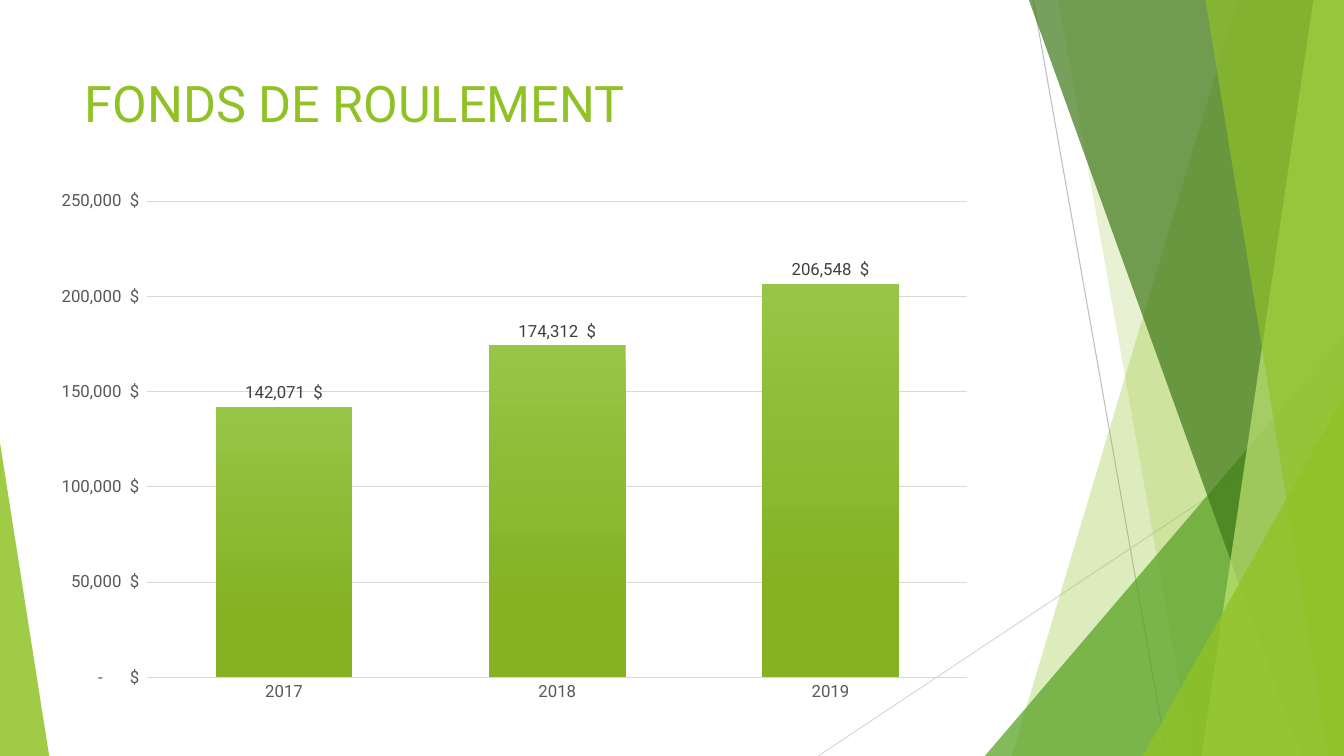
from lxml.etree import SubElement
from pptx import Presentation
from pptx.chart.data import CategoryChartData
from pptx.dml.color import RGBColor
from pptx.enum.chart import XL_CHART_TYPE, XL_LABEL_POSITION, XL_TICK_MARK
from pptx.enum.shapes import MSO_CONNECTOR, MSO_SHAPE
from pptx.enum.text import MSO_ANCHOR, MSO_AUTO_SIZE, PP_ALIGN
from pptx.oxml.ns import qn
from pptx.util import Cm, Pt

TITLE = "FONDS DE ROULEMENT"
WORKING_CAPITAL = {"2017": 142071, "2018": 174312, "2019": 206548}
DOLLARS = r'_ * #,##0_)\ "$"_ ;_ * \(#,##0\)\ "$"_ ;_ * "-"??_)\ "$"_ ;_ @_ '
FONT = "Roboto"
COLORS = {
    "lime": "90C226", "green": "54A021", "forest": "3F7819", "pale": "C0E474",
    "bar_top": "97C547", "bar_bottom": "84B223", "axis": "595959",
    "label": "404040", "grid": "D9D9D9", "gray": "BFBFBF",
}
WIDTH, HEIGHT = 33.87, 19.05  # all lengths are in centimetres

# start x, start y, end x, end y, color
LINES = [
    (26.04, 0, 29.41, HEIGHT, "gray"),
    (WIDTH, 10.24, 20.62, HEIGHT, "grid"),
]
# Bands reach the right edge: ("band", top x, bottom x, color, opacity)
# Triangles stand on the bottom edge: ("triangle", left, width, height, apex, color, opacity)
FACETS = [
    ("band", 31.19, 25.5, "lime", 30),
    ("band", 26.67, 30.05, "lime", 20),
    ("triangle", 24.82, 9.05, 10.59, 1, "green", 72),
    ("band", 25.93, 32.79, "forest", 70),
    ("band", 33.1, 30.28, "pale", 70),
    ("band", 30.38, 33.48, "lime", 65),
    ("triangle", 28.8, 5.07, 9.07, 1, "lime", 80),
    ("triangle", 0, 1.24, 7.9, 0, "lime", 85),
]


def rgb(name):
    return RGBColor.from_string(COLORS[name])


def style_font(font, size, color):
    font.name, font.size, font.bold = FONT, Pt(size), False
    font.color.rgb = rgb(color)


def write_text(frame, text, size, color, align=PP_ALIGN.LEFT, anchor=MSO_ANCHOR.TOP):
    frame.word_wrap = True
    frame.auto_size = MSO_AUTO_SIZE.NONE
    frame.vertical_anchor = anchor
    para = frame.paragraphs[0]
    para.alignment = align
    span = para.add_run()
    span.text = text
    style_font(span.font, size, color)


def add_line(page, x1, y1, x2, y2, color):
    line = page.shapes.add_connector(MSO_CONNECTOR.STRAIGHT, Cm(x1), Cm(y1), Cm(x2), Cm(y2))
    line.line.color.rgb = rgb(color)
    line.line.width = Pt(0.75)
    SubElement(line.element.spPr, qn("a:effectLst"))


def add_band(page, top_x, bottom_x):
    builder = page.shapes.build_freeform(Cm(top_x), 0, scale=1.0)
    corners = [(WIDTH, 0), (WIDTH, HEIGHT), (bottom_x, HEIGHT)]
    builder.add_line_segments([(Cm(x), Cm(y)) for x, y in corners], close=True)
    return builder.convert_to_shape()


def add_triangle(page, left, width, height, apex):
    shape = page.shapes.add_shape(
        MSO_SHAPE.ISOSCELES_TRIANGLE, Cm(left), Cm(HEIGHT - height), Cm(width), Cm(height))
    shape.adjustments[0] = apex
    return shape


def fill_facet(shape, color, opacity):
    shape.shadow.inherit = False
    shape.line.fill.background()
    shape.fill.solid()
    shape.fill.fore_color.rgb = rgb(color)
    color_node = shape.element.spPr.find(qn("a:solidFill"))[0]
    SubElement(color_node, qn("a:alpha"), val=str(opacity * 1000))


def add_bar_chart(page):
    data = CategoryChartData(number_format=DOLLARS)
    data.categories = list(WORKING_CAPITAL)
    data.add_series("Series 1", list(WORKING_CAPITAL.values()))
    chart = page.shapes.add_chart(
        XL_CHART_TYPE.COLUMN_CLUSTERED, Cm(0.97), Cm(4.55), Cm(23.88), Cm(13.39), data).chart
    chart.has_title = chart.has_legend = False
    chart.font.name, chart.font.size = FONT, Pt(10)

    years, amounts = chart.category_axis, chart.value_axis
    for axis in (years, amounts):
        axis.major_tick_mark = axis.minor_tick_mark = XL_TICK_MARK.NONE
        style_font(axis.tick_labels.font, 12, "axis")
    years.format.line.color.rgb = rgb("grid")
    years.format.line.width = Pt(1)
    amounts.format.line.fill.background()
    amounts.minimum_scale, amounts.maximum_scale, amounts.major_unit = 0, 250000, 50000
    amounts.major_gridlines.format.line.color.rgb = rgb("grid")
    amounts.major_gridlines.format.line.width = Pt(0.75)

    plot = chart.plots[0]
    plot.gap_width, plot.overlap, plot.vary_by_categories = 100, -24, False
    bars = plot.series[0]
    fill = bars.format.fill
    fill.gradient()
    fill.gradient_angle = 270
    for stop, color, position in zip(fill.gradient_stops, ("bar_top", "bar_bottom"), (0, 0.78)):
        stop.color.rgb = rgb(color)
        stop.position = position

    labels = bars.data_labels
    labels.show_value = True
    labels.position = XL_LABEL_POSITION.OUTSIDE_END
    style_font(labels.font, 12, "label")
    for item in (amounts.tick_labels, labels):
        item.number_format, item.number_format_is_linked = DOLLARS, False


def main():
    deck = Presentation()
    deck.slide_width, deck.slide_height = Cm(WIDTH), Cm(HEIGHT)
    page = deck.slides.add_slide(deck.slide_layouts[5])

    for line in LINES:
        add_line(page, *line)
    draw = {"band": add_band, "triangle": add_triangle}
    for kind, *geometry, color, opacity in FACETS:
        fill_facet(draw[kind](page, *geometry), color, opacity)

    title = page.shapes.title
    title.left, title.top, title.width, title.height = Cm(1.88), Cm(1.7), Cm(23.88), Cm(3.66)
    write_text(title.text_frame, TITLE, 36, "lime")
    page.shapes.element.append(title.element)  # bring the title in front of the facets
    add_bar_chart(page)
    deck.save("out.pptx")


if __name__ == "__main__":
    main()
